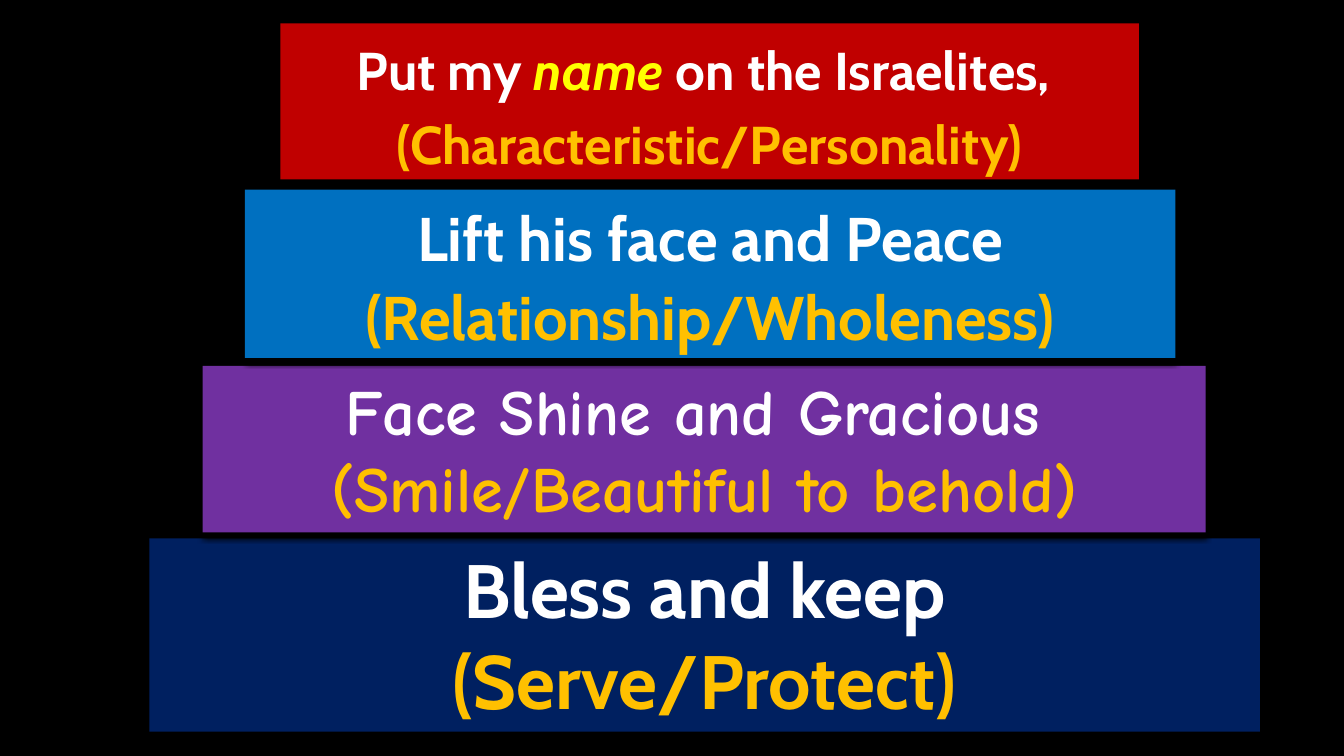
from dataclasses import dataclass

from lxml.etree import SubElement
from pptx import Presentation
from pptx.dml.color import RGBColor
from pptx.enum.shapes import MSO_SHAPE
from pptx.enum.text import MSO_ANCHOR, MSO_AUTO_SIZE, PP_ALIGN
from pptx.oxml.ns import qn
from pptx.util import Pt


@dataclass(frozen=True)
class Theme:
    background: str = "000000"
    name_tier: str = "C00000"
    peace_tier: str = "0070C0"
    grace_tier: str = "7030A0"
    blessing_tier: str = "002060"
    phrase: str = "FFFFFF"
    meaning: str = "FFC000"
    highlight: str = "FFFF00"
    main_font: str = "Cabin"
    grace_font: str = "Comic Neue"
    name_size: int = 38
    peace_size: int = 44
    grace_size: int = 46
    blessing_size: int = 54


THEME = Theme()


def add_text(paragraph, text, *, size, font, color, italic=False):
    run = paragraph.add_run()
    run.text = text
    run.font.size = Pt(size)
    run.font.name = font
    run.font.bold = True
    run.font.italic = italic
    run.font.color.rgb = RGBColor.from_string(color)


def cast_shadow(tier):
    effects = tier._element.spPr.find(qn("a:effectLst"))
    shadow = SubElement(effects, qn("a:outerShdw"), blurRad=str(Pt(4)),
                        dist=str(Pt(4)), dir="5400000", algn="t", rotWithShape="0")
    SubElement(shadow, qn("a:srgbClr"), val=THEME.background)


def add_tier(slide, box, phrase, meaning, *, fill, size, font=THEME.main_font,
             spacing=1.0, shadow=False):
    tier = slide.shapes.add_shape(MSO_SHAPE.RECTANGLE, *map(Pt, box))
    tier.shadow.inherit = False
    tier.fill.solid()
    tier.fill.fore_color.rgb = RGBColor.from_string(fill)
    tier.line.fill.background()
    if shadow:
        cast_shadow(tier)

    frame = tier.text_frame
    frame.word_wrap = True
    frame.vertical_anchor = MSO_ANCHOR.TOP
    frame.auto_size = MSO_AUTO_SIZE.SHAPE_TO_FIT_TEXT
    phrase_line, meaning_line = frame.paragraphs[0], frame.add_paragraph()
    for line in (phrase_line, meaning_line):
        line.alignment = PP_ALIGN.CENTER
        line.line_spacing = spacing
    for text, color, italic in phrase:
        add_text(phrase_line, text, size=size, font=font, color=color, italic=italic)
    add_text(meaning_line, meaning, size=size, font=font, color=THEME.meaning)


def build_pyramid(slide):
    def plain(text):
        return (text, THEME.phrase, False)

    add_tier(slide, (200.2, 16.6, 613.4, 111.6),
             [plain("Put my "), ("name", THEME.highlight, True),
              plain(" on the Israelites, ")],
             "(Characteristic/Personality)",
             fill=THEME.name_tier, size=THEME.name_size, spacing=1.15)
    add_tier(slide, (106.6, 384.5, 793.4, 138.2),
             [plain("Bless and keep")], "(Serve/Protect)",
             fill=THEME.blessing_tier, size=THEME.blessing_size)
    add_tier(slide, (144.7, 261.4, 716.4, 118.8),
             [plain("Face Shine and Gracious ")], "(Smile/Beautiful to behold)",
             fill=THEME.grace_tier, size=THEME.grace_size,
             font=THEME.grace_font, shadow=True)
    add_tier(slide, (175, 135.4, 664.6, 120.2),
             [plain("Lift his face and Peace")], "(Relationship/Wholeness)",
             fill=THEME.peace_tier, size=THEME.peace_size,
             spacing=1.07, shadow=True)


def main():
    deck = Presentation()
    deck.slide_width, deck.slide_height = Pt(960), Pt(540)
    slide = deck.slides.add_slide(deck.slide_layouts.get_by_name("Blank"))
    slide.background.fill.solid()
    slide.background.fill.fore_color.rgb = RGBColor.from_string(THEME.background)
    build_pyramid(slide)
    deck.save("out.pptx")


if __name__ == "__main__":
    main()
